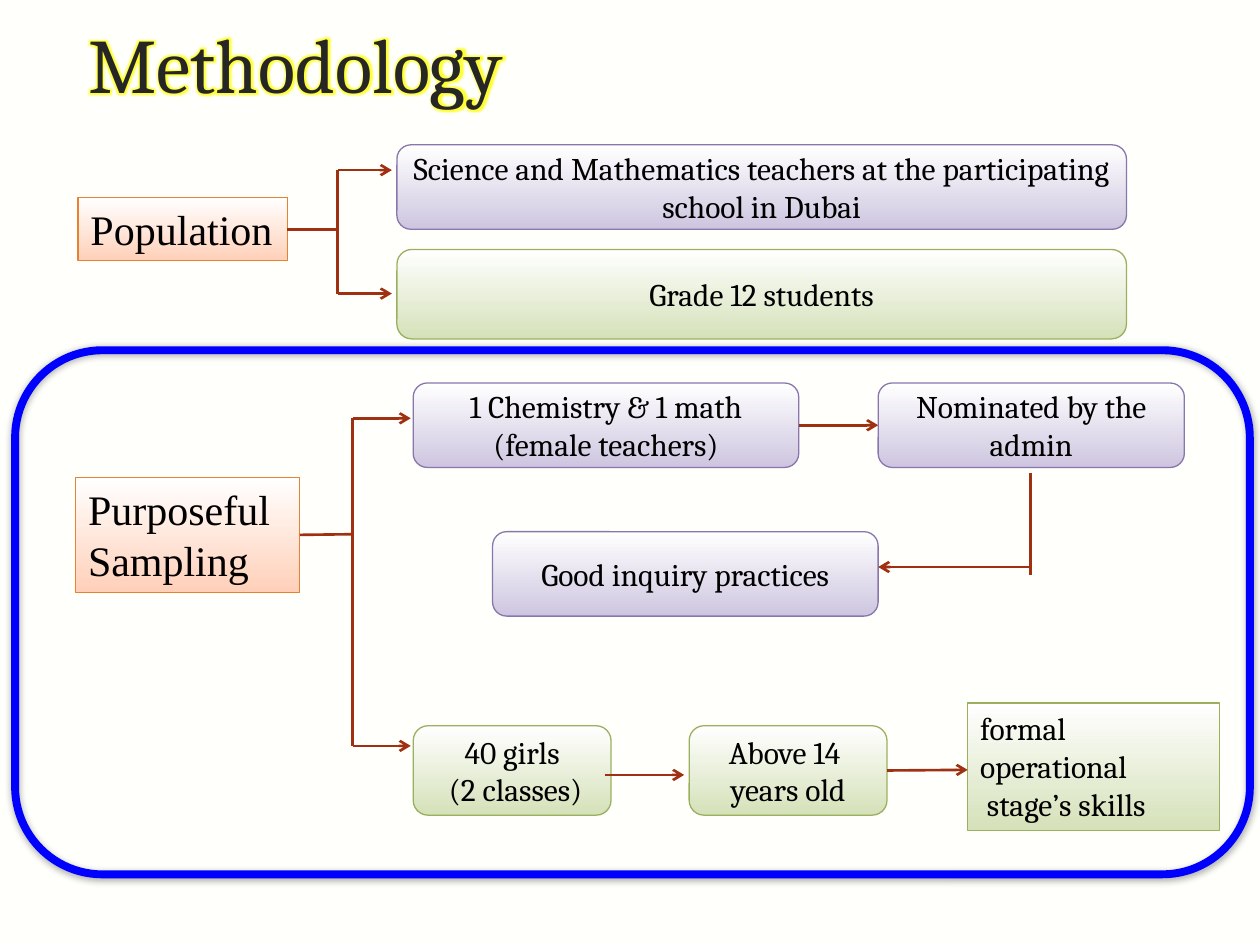
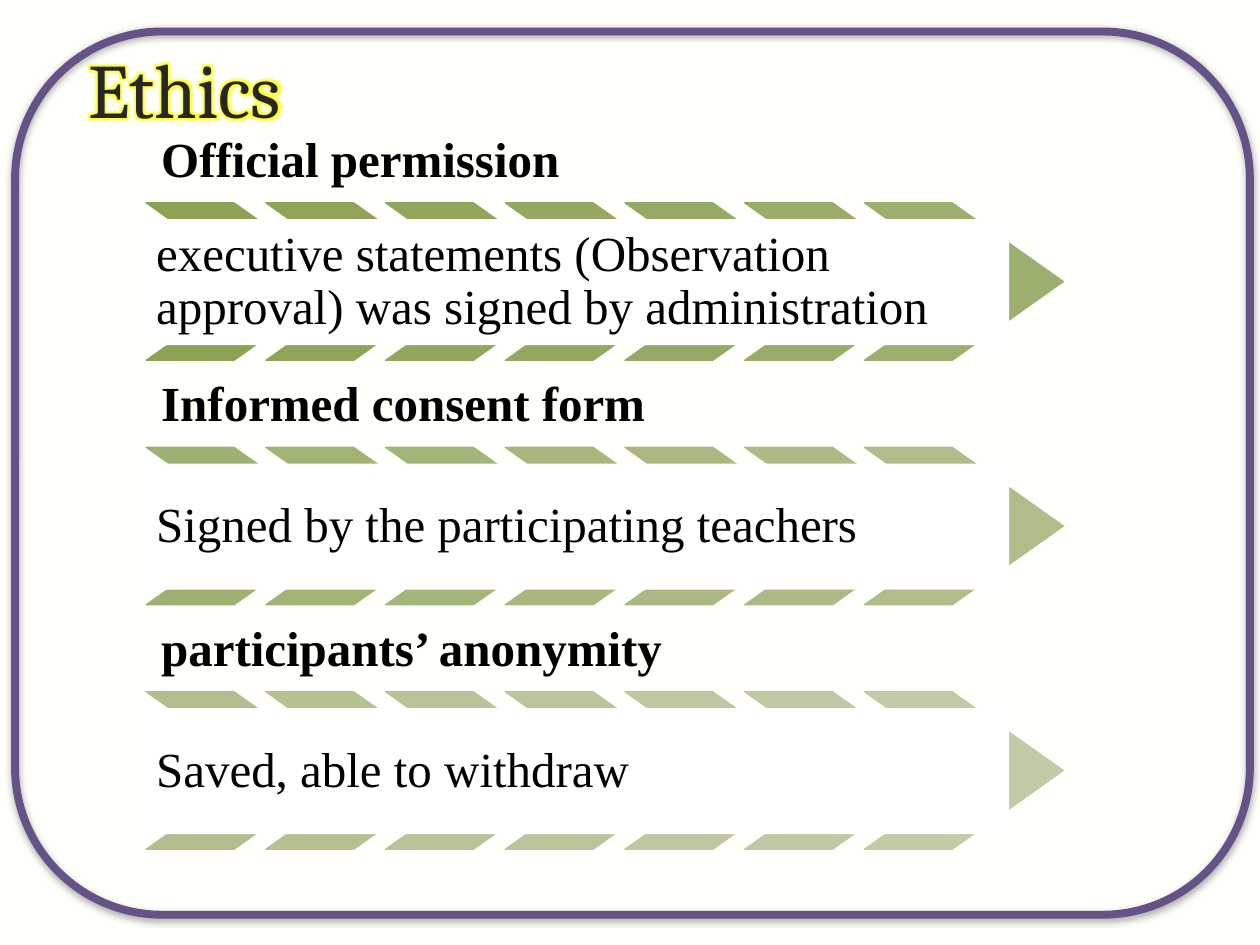
from dataclasses import dataclass

import pptx
import pptx.dml.color
import pptx.enum.dml
import pptx.enum.shapes
import pptx.enum.text
import pptx.oxml
import pptx.oxml.ns
import pptx.slide
import pptx.util
from pptx.util import Inches, Pt

RGB = pptx.dml.color.RGBColor
MSO = pptx.enum.shapes.MSO_SHAPE
ALIGN = pptx.enum.text.PP_ALIGN
ANCHOR = pptx.enum.text.MSO_ANCHOR
AUTO = pptx.enum.text.MSO_AUTO_SIZE
NS = pptx.oxml.ns.nsdecls("a")
QN = pptx.oxml.ns.qn


@dataclass(frozen=True)
class Tint:
    """Lower gradient colour and outline of a box."""
    fill: str
    line: str


@dataclass(frozen=True)
class Theme:
    background: str = "FFFFFB"
    title: str = "262626"
    glow: str = "FFFF00"
    text: str = "000000"
    white: str = "FFFFFF"
    arrow: str = "9F3011"
    blue_frame: str = "0000FF"
    purple_frame: str = "655287"
    orange: Tint = Tint("FFD0B9", "E68230")
    purple: Tint = Tint("CEC6E0", "8976AC")
    green: Tint = Tint("D5E1B9", "9BB05E")
    chevron_first: tuple[int, int, int] = (141, 162, 85)
    chevron_last: tuple[int, int, int] = (193, 204, 167)
    serif: str = "Cambria"
    roman: str = "Times New Roman"
    title_size: int = 44
    ethics_size: int = 28
    label_size: int = 24
    box_size: int = 18


THEME = Theme()


@dataclass(frozen=True)
class Box:
    name: str
    at: tuple[float, float, float, float]
    lines: tuple[str, ...]
    tint: Tint
    kind: MSO = MSO.ROUNDED_RECTANGLE
    align: ALIGN = ALIGN.CENTER
    is_label: bool = False


@dataclass(frozen=True)
class Line:
    """A straight line; from_box joins a right side, to_box a left side."""
    start: tuple[float, float]
    end: tuple[float, float]
    arrow: bool = False
    from_box: str = ""
    to_box: str = ""


@dataclass(frozen=True)
class Principle:
    heading: str
    detail: str


PURPLE, GREEN = THEME.purple, THEME.green
BOXES = [
    Box("population", (0.62, 1.57, 1.66, 0.5), ("Population",), THEME.orange,
        MSO.RECTANGLE, ALIGN.LEFT, True),
    Box("teachers", (3.15, 1.15, 5.79, 0.67),
        ("Science and Mathematics teachers at the participating school in Dubai",), PURPLE),
    Box("students", (3.15, 1.98, 5.79, 0.71), ("Grade 12 students",), GREEN),
    Box("sampling", (0.6, 3.79, 1.78, 0.91), ("Purposeful", "Sampling"), THEME.orange,
        MSO.RECTANGLE, ALIGN.LEFT, True),
    Box("sampled teachers", (3.28, 3.04, 3.06, 0.67),
        ("1 Chemistry & 1 math (female teachers)",), PURPLE),
    Box("nominated", (6.97, 3.04, 2.43, 0.67), ("Nominated by the admin",), PURPLE),
    Box("inquiry", (3.91, 4.22, 3.06, 0.67), ("Good inquiry practices",), PURPLE),
    Box("age", (5.47, 5.76, 1.57, 0.71), ("Above 14 ", "years old"), GREEN),
    Box("girls", (3.28, 5.76, 1.57, 0.71), ("40 girls", " (2 classes)"), GREEN),
    Box("skills", (7.68, 5.58, 2, 1.01), ("formal operational", " stage’s skills"), GREEN,
        MSO.RECTANGLE, ALIGN.LEFT),
]
LINES = [
    Line((6.34, 3.38), (6.97, 3.38), True, "sampled teachers", "nominated"),
    Line((8.18, 3.75), (8.18, 4.56)),
    Line((8.18, 4.5), (6.97, 4.5), True),
    Line((7.04, 6.11), (7.68, 6.11), True, "age"),
    Line((4.8, 6.15), (5.43, 6.15), True),
]
PRINCIPLES = [
    Principle("Official permission",
              "executive statements (Observation approval) was signed by administration"),
    Principle("Informed consent form", "Signed by the participating teachers"),
    Principle("participants’ anonymity", "Saved, able to withdraw"),
]
CHEVRONS_PER_ROW = 7


def rgb(value: str) -> RGB:
    return RGB.from_string(value)


def write(tf, lines: tuple[str, ...], font: str, size: int, color: str = THEME.text,
          align: ALIGN = ALIGN.LEFT, bold: bool = False, spacing: float = 1.0) -> None:
    for i, line in enumerate(lines):
        p = tf.add_paragraph() if i else tf.paragraphs[0]
        p.text = line
        p.alignment = align
        p.line_spacing = spacing
        p.font.name, p.font.size, p.font.bold = font, Pt(size), bold
        p.font.color.rgb = rgb(color)


def set_margins(tf, margin: float) -> None:
    tf.margin_left = tf.margin_right = tf.margin_top = tf.margin_bottom = Inches(margin)


def add_shape(s: pptx.slide.Slide, kind: MSO, at: tuple[float, float, float, float]):
    sp = s.shapes.add_shape(kind, *map(Inches, at))
    sp.shadow.inherit = False
    return sp


def add_titled_slide(prs, title: str, top: float) -> pptx.slide.Slide:
    s = prs.slides.add_slide(prs.slide_layouts[5])
    sp = s.shapes.title
    sp.left, sp.top, sp.width, sp.height = map(Inches, (0.6, top, 8.79, 0.35))
    tf = sp.text_frame
    tf.auto_size = AUTO.NONE
    tf.vertical_anchor = ANCHOR.MIDDLE
    write(tf, (title,), THEME.serif, THEME.title_size, THEME.title)
    r = tf.paragraphs[0].runs[0]
    r._r.get_or_add_rPr().append(pptx.oxml.parse_xml(
        f'<a:effectLst {NS}><a:glow rad="{Pt(5)}"><a:srgbClr val="{THEME.glow}">'
        '<a:alpha val="80000"/></a:srgbClr></a:glow></a:effectLst>'))
    return s


def add_frame(s: pptx.slide.Slide, at: tuple[float, float, float, float], color: str) -> None:
    """Thick rounded outline with a soft shadow."""
    sp = add_shape(s, MSO.ROUNDED_RECTANGLE, at)
    sp.fill.background()
    sp.line.color.rgb = rgb(color)
    sp.line.width = Pt(4.5)
    sp._element.spPr.find(QN("a:effectLst")).append(pptx.oxml.parse_xml(
        f'<a:outerShdw {NS} blurRad="{Pt(4)}" dist="{Pt(1)}" dir="5400000" rotWithShape="0">'
        '<a:srgbClr val="000000"><a:alpha val="37000"/></a:srgbClr></a:outerShdw>'))


def add_box(s: pptx.slide.Slide, box: Box):
    sp = add_shape(s, box.kind, box.at)
    sp.fill.gradient()
    sp.fill.gradient_angle = 270
    for stop, position, color in zip(sp.fill.gradient_stops, (0, 1),
                                     (THEME.white, box.tint.fill)):
        stop.position, stop.color.rgb = position, rgb(color)
    sp.line.color.rgb = rgb(box.tint.line)
    sp.line.width = Pt(0.75)
    tf = sp.text_frame
    tf.word_wrap = not box.is_label
    if box.kind == MSO.RECTANGLE:
        tf.vertical_anchor = ANCHOR.TOP
        tf.auto_size = AUTO.SHAPE_TO_FIT_TEXT
    else:
        tf.vertical_anchor = ANCHOR.MIDDLE
    font, size = ((THEME.roman, THEME.label_size) if box.is_label
                  else (THEME.serif, THEME.box_size))
    write(tf, box.lines, font, size, align=box.align)
    return sp


def add_line(s: pptx.slide.Slide, line: Line, boxes: dict) -> None:
    c = s.shapes.add_connector(pptx.enum.shapes.MSO_CONNECTOR.STRAIGHT,
                               *map(Inches, line.start + line.end))
    if line.from_box:
        c.begin_connect(boxes[line.from_box], 3)
    if line.to_box:
        c.end_connect(boxes[line.to_box], 1)
    c.line.color.rgb = rgb(THEME.arrow)
    c.line.width = Pt(1.5)
    if line.arrow:
        c.line._get_or_add_ln().append(pptx.oxml.parse_xml(f'<a:tailEnd {NS} type="arrow"/>'))
    c._element.spPr.append(pptx.oxml.parse_xml(f"<a:effectLst {NS}/>"))


def fork(source: str, start: tuple[float, float], trunk: float, tip: float,
         top: float, bottom: float) -> list[Line]:
    """Lines that branch from one box to two arrows."""
    return [
        Line(start, (trunk, start[1]), from_box=source),
        Line((trunk, top), (trunk, bottom)),
        *(Line((trunk, y), (tip, y), True) for y in (top, bottom)),
    ]


def add_principle(s: pptx.slide.Slide, row: int, principle: Principle) -> None:
    left, top = 1.16, 1.61 + 1.94 * row
    heading = s.shapes.add_textbox(*map(Inches, (left, top - 0.61, 6.76, 0.61)))
    tf = heading.text_frame
    tf.word_wrap = True
    tf.vertical_anchor = ANCHOR.BOTTOM
    set_margins(tf, 0.12)
    write(tf, (principle.heading,), THEME.roman, THEME.ethics_size, bold=True, spacing=0.9)

    last = CHEVRONS_PER_ROW * len(PRINCIPLES) - 1
    for i in range(CHEVRONS_PER_ROW):
        share = (row * CHEVRONS_PER_ROW + i) / last
        color = RGB(*(round(a + (b - a) * share)
                      for a, b in zip(THEME.chevron_first, THEME.chevron_last)))
        sp = add_shape(s, MSO.CHEVRON, (left + 0.95 * i, top, 1.58, 1.25))
        sp.adjustments[0] = 0.706
        sp.fill.solid()
        sp.fill.fore_color.rgb = sp.line.color.rgb = color
        sp.line.width = Pt(0.75)

    band = add_shape(s, MSO.RECTANGLE, (left, top + 0.13, 6.85, 1))
    band.fill.solid()
    band.fill.fore_color.rgb = rgb(THEME.white)
    band.line.fill.background()
    tf = band.text_frame
    tf.word_wrap = True
    tf.vertical_anchor = ANCHOR.MIDDLE
    set_margins(tf, 0.08)
    write(tf, (principle.detail,), THEME.roman, THEME.ethics_size, spacing=0.9)


def build_methodology(prs) -> None:
    s = add_titled_slide(prs, "Methodology", 0.32)
    boxes = {box.name: add_box(s, box) for box in BOXES}
    for line in (fork("population", (2.28, 1.82), 2.68, 3.11, 1.35, 2.33)
                 + fork("sampling", (2.38, 4.24), 2.8, 3.26, 3.32, 5.92) + LINES):
        add_line(s, line, boxes)
    add_frame(s, (0.12, 2.78, 9.8, 4.16), THEME.blue_frame)


def build_ethics(prs) -> None:
    s = add_titled_slide(prs, "Ethics", 0.52)
    for row, principle in enumerate(PRINCIPLES):
        add_principle(s, row, principle)
    add_frame(s, (0.12, 0.25, 9.8, 7.01), THEME.purple_frame)


def main() -> None:
    prs = pptx.Presentation()
    prs.slide_width, prs.slide_height = Inches(10), Inches(7.5)
    fill = prs.slide_master.background.fill
    fill.solid()
    fill.fore_color.rgb = rgb(THEME.background)
    build_methodology(prs)
    build_ethics(prs)
    prs.save("out.pptx")


if __name__ == "__main__":
    main()
